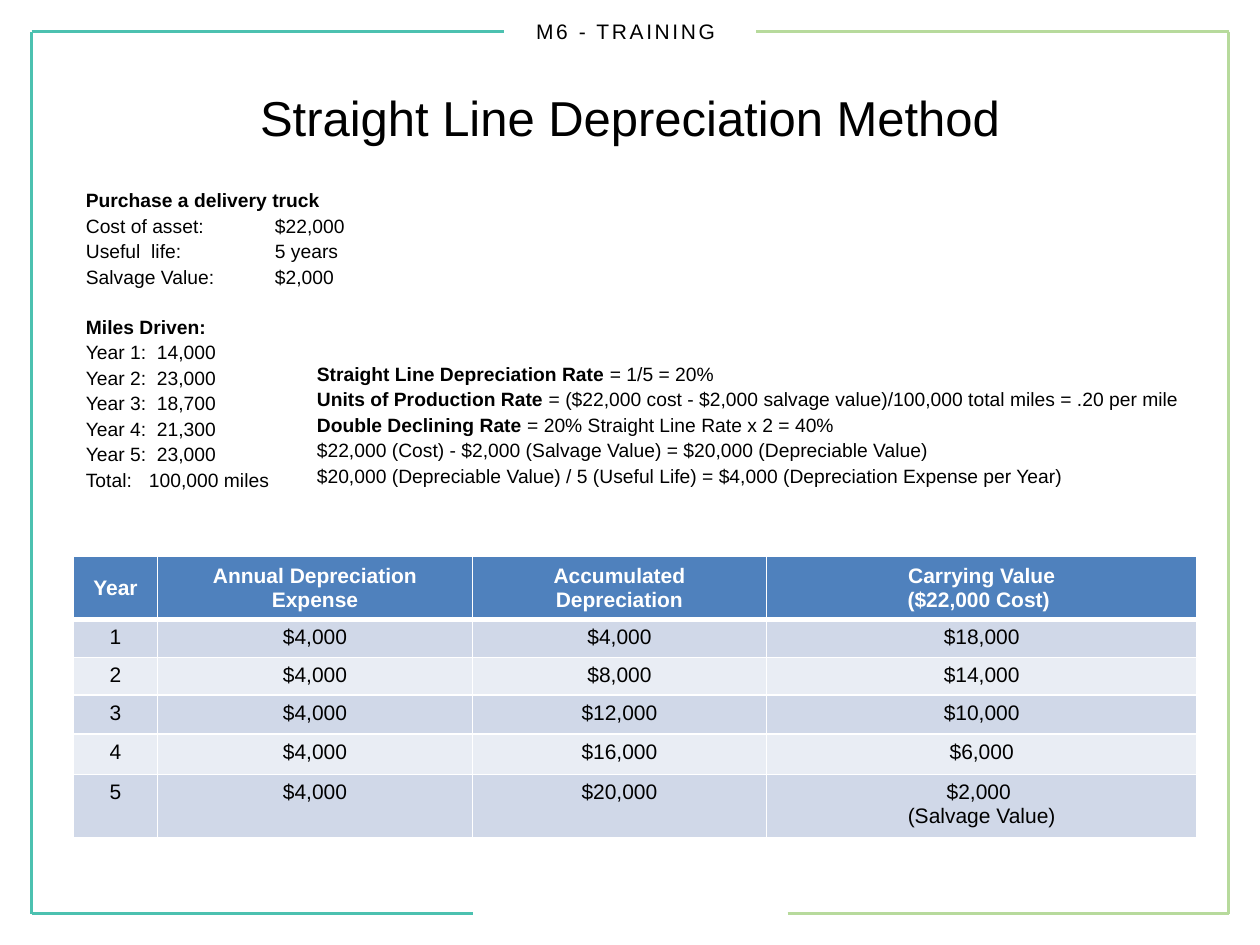
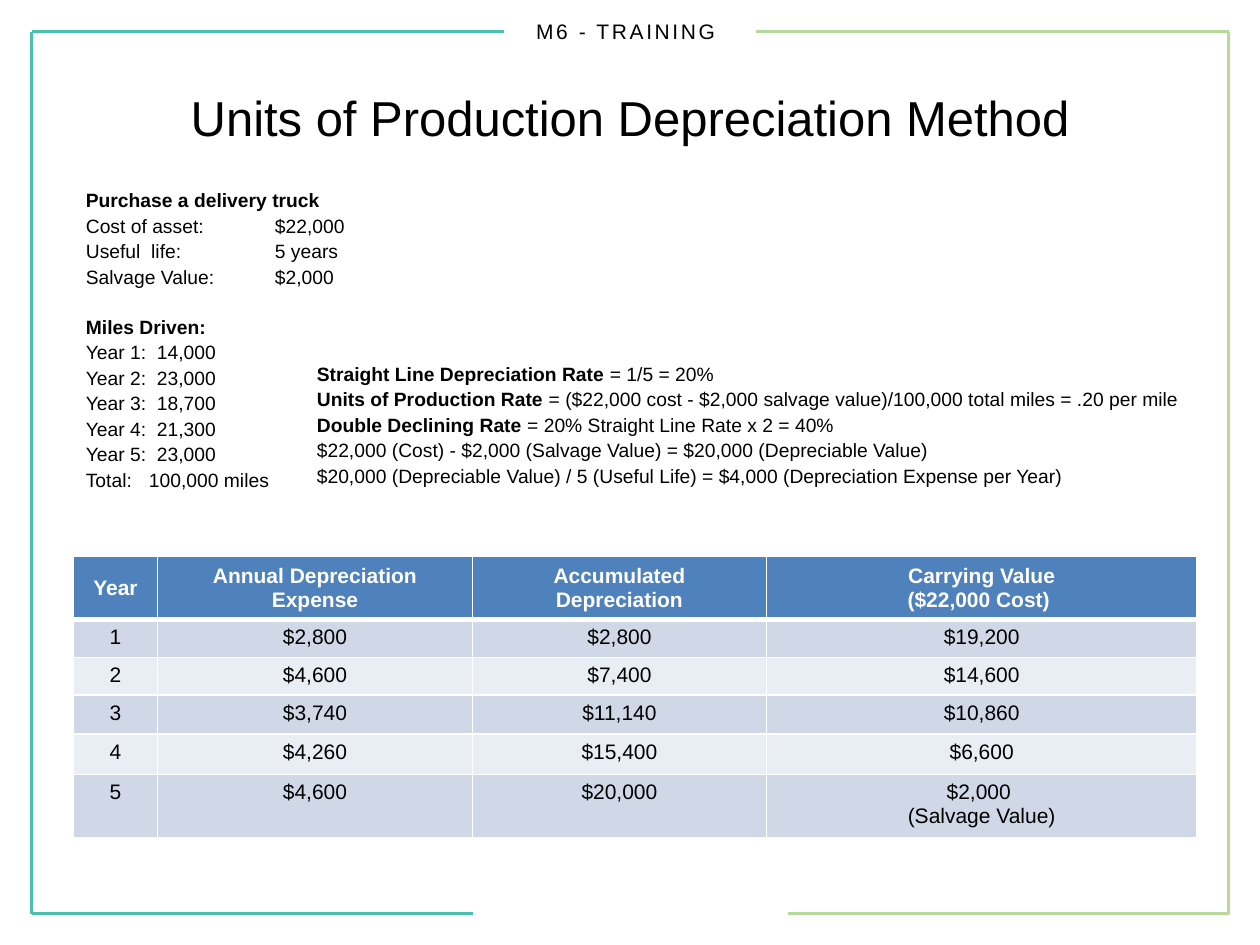
from dataclasses import dataclass
from itertools import accumulate

from lxml.etree import SubElement
from pptx import Presentation
from pptx.dml.color import RGBColor
from pptx.enum.shapes import MSO_CONNECTOR
from pptx.enum.text import MSO_ANCHOR, PP_ALIGN
from pptx.oxml import parse_xml
from pptx.oxml.ns import nsdecls, qn
from pptx.util import Pt


@dataclass(frozen=True)
class Theme:
    font: str = "Arial"
    text: str = "000000"
    white: str = "FFFFFF"
    teal: str = "4CC1B0"
    green: str = "B7DA9C"
    head_fill: str = "4F81BD"
    bands: tuple = ("D0D8E8", "E9EDF4")
    title_size: float = 28
    table_size: float = 12
    header_size: float = 12
    body_size: float = 11


T = Theme()
WIDTH, HEIGHT, EDGE = 720, 540, 18
LINE_GAP, SECTION_GAP = 2.7, 16.8
VALUE_TAB, YEAR_TAB, TOTAL_TAB = 108, 40.6, 36
COST = 22000

FRAME = [
    (EDGE, EDGE, EDGE, HEIGHT - EDGE, T.teal),
    (WIDTH - EDGE, EDGE, WIDTH - EDGE, HEIGHT - EDGE, T.green),
    (EDGE, HEIGHT - EDGE, 270, HEIGHT - EDGE, T.teal),
    (450, HEIGHT - EDGE, WIDTH - EDGE, HEIGHT - EDGE, T.green),
    (EDGE, EDGE, 288, EDGE, T.teal),
    (432, EDGE, WIDTH - EDGE, EDGE, T.green),
]

TRUCK_FACTS = [
    ("Purchase a delivery truck", "", None),
    ("", "Cost of asset:\t$22,000", VALUE_TAB),
    ("", "Useful  life:\t5 years", VALUE_TAB),
    ("", "Salvage Value:\t$2,000", VALUE_TAB),
    ("Miles Driven:", "", None),
    ("", "Year 1:\t14,000", YEAR_TAB),
    ("", "Year 2:\t23,000", YEAR_TAB),
    ("", "Year 3:\t18,700", YEAR_TAB),
    ("", "Year 4:\t21,300", YEAR_TAB),
    ("", "Year 5:\t23,000", YEAR_TAB),
    ("", "Total:\t100,000 miles", TOTAL_TAB),
]

RATES = [
    ("Straight Line Depreciation Rate", " = 1/5 = 20%", None),
    ("Units of Production Rate ",
     "= ($22,000 cost - $2,000 salvage value)/100,000 total miles = .20 per mile", None),
    ("Double Declining Rate ", "= 20% Straight Line Rate x 2 = 40%", None),
    ("", "$22,000 (Cost) - $2,000 (Salvage Value) = $20,000 (Depreciable Value)", None),
    ("", "$20,000 (Depreciable Value) / 5 (Useful Life) = $4,000 "
     "(Depreciation Expense per Year)", None),
]

HEADINGS = ["Year", "Annual Depreciation Expense", "Accumulated\vDepreciation",
            "Carrying Value\n($22,000 Cost) "]
COL_WIDTHS = [48, 180, 168, 246]
ROW_HEIGHTS = [29.5, 20.9, 21.6, 22.3, 23, 29.5]

METHODS = [
    ("Straight Line Depreciation Method", [4000] * 5),
    ("Units of Production Depreciation Method", [2800, 4600, 3740, 4260, 4600]),
]


def style_run(r, size, color=T.text, bold=False):
    r.font.name = T.font
    r.font.size = Pt(size)
    r.font.bold = bold
    r.font.color.rgb = RGBColor.from_string(color)


def add_box(s, left, top, width, height, anchor):
    tf = s.shapes.add_textbox(Pt(left), Pt(top), Pt(width), Pt(height)).text_frame
    tf.word_wrap = True
    tf.vertical_anchor = anchor
    return tf


def add_frame(s):
    for x1, y1, x2, y2, color in FRAME:
        line = s.shapes.add_connector(MSO_CONNECTOR.STRAIGHT, Pt(x1), Pt(y1), Pt(x2), Pt(y2))
        line.line.color.rgb = RGBColor.from_string(color)
        line.line.width = Pt(2.25)
        SubElement(line._element.spPr, qn("a:effectLst"))


def add_header(s):
    p = add_box(s, 0, 0, WIDTH, 36, MSO_ANCHOR.MIDDLE).paragraphs[0]
    p.text = "M6 - TRAINING "
    p.alignment = PP_ALIGN.CENTER
    style_run(p.runs[0], T.header_size)
    p.runs[0].font._element.set("spc", "150")


def set_title(s, text):
    sp = s.shapes.title
    sp.left, sp.top, sp.width, sp.height = Pt(36), Pt(21.6), Pt(648), Pt(90)
    tf = sp.text_frame
    tf.text = text
    tf.vertical_anchor = MSO_ANCHOR.MIDDLE
    tf.paragraphs[0].alignment = PP_ALIGN.CENTER
    style_run(tf.paragraphs[0].runs[0], T.title_size)


def add_tab(p, position):
    tabs = SubElement(p._p.get_or_add_pPr(), qn("a:tabLst"))
    SubElement(tabs, qn("a:tab"), pos=str(Pt(position)), algn="l")


def fill_lines(tf, lines):
    for i, (lead, rest, tab) in enumerate(lines):
        p = tf.add_paragraph() if i else tf.paragraphs[0]
        p.line_spacing = 0.9
        if i:
            p.space_before = Pt(LINE_GAP if rest or not lead else SECTION_GAP)
        if tab:
            add_tab(p, tab)
        for text, bold in ((lead, True), (rest, False)):
            if text:
                r = p.add_run()
                r.text = text
                style_run(r, T.body_size, bold=bold)


def set_borders(cell, top, bottom):
    tcPr = cell._tc.get_or_add_tcPr()
    for i, (side, width) in enumerate((("L", 1), ("R", 1), ("T", top), ("B", bottom))):
        tcPr.insert(i, parse_xml(
            f'<a:ln{side} {nsdecls("a")} w="{Pt(width)}"><a:solidFill>'
            f'<a:srgbClr val="{T.white}"/></a:solidFill></a:ln{side}>'))


def schedule(expenses):
    rows = [HEADINGS]
    for year, (expense, total) in enumerate(zip(expenses, accumulate(expenses)), 1):
        rows.append([str(year)] + [f"${v:,}" for v in (expense, total, COST - total)])
    rows[-1][-1] += " \n(Salvage Value)"
    return rows


def add_schedule(s, expenses):
    rows = schedule(expenses)
    table = s.shapes.add_table(len(rows), len(COL_WIDTHS), Pt(42), Pt(318),
                               Pt(sum(COL_WIDTHS)), Pt(sum(ROW_HEIGHTS))).table
    for col, width in zip(table.columns, COL_WIDTHS):
        col.width = Pt(width)
    for i, values in enumerate(rows):
        head = i == 0
        table.rows[i].height = Pt(ROW_HEIGHTS[i])
        for j, text in enumerate(values):
            cell = table.cell(i, j)
            cell.text = text
            cell.vertical_anchor = MSO_ANCHOR.MIDDLE if head else MSO_ANCHOR.TOP
            cell.fill.solid()
            cell.fill.fore_color.rgb = RGBColor.from_string(
                T.head_fill if head else T.bands[(i - 1) % 2])
            set_borders(cell, 3 if i == 1 else 1, 3 if head else 1)
            for p in cell.text_frame.paragraphs:
                p.alignment = PP_ALIGN.CENTER
                for r in p.runs:
                    style_run(r, T.table_size, T.white if head else T.text, head)


def main():
    prs = Presentation()
    prs.slide_width, prs.slide_height = Pt(WIDTH), Pt(HEIGHT)
    for title, expenses in METHODS:
        s = prs.slides.add_slide(prs.slide_layouts[5])
        add_frame(s)
        add_header(s)
        set_title(s, title)
        fill_lines(add_box(s, 174, 174, 510, 108, MSO_ANCHOR.BOTTOM), RATES)
        add_schedule(s, expenses)
        fill_lines(add_box(s, 42, 90, 174, 210, MSO_ANCHOR.MIDDLE), TRUCK_FACTS)
    prs.save("out.pptx")


if __name__ == "__main__":
    main()
